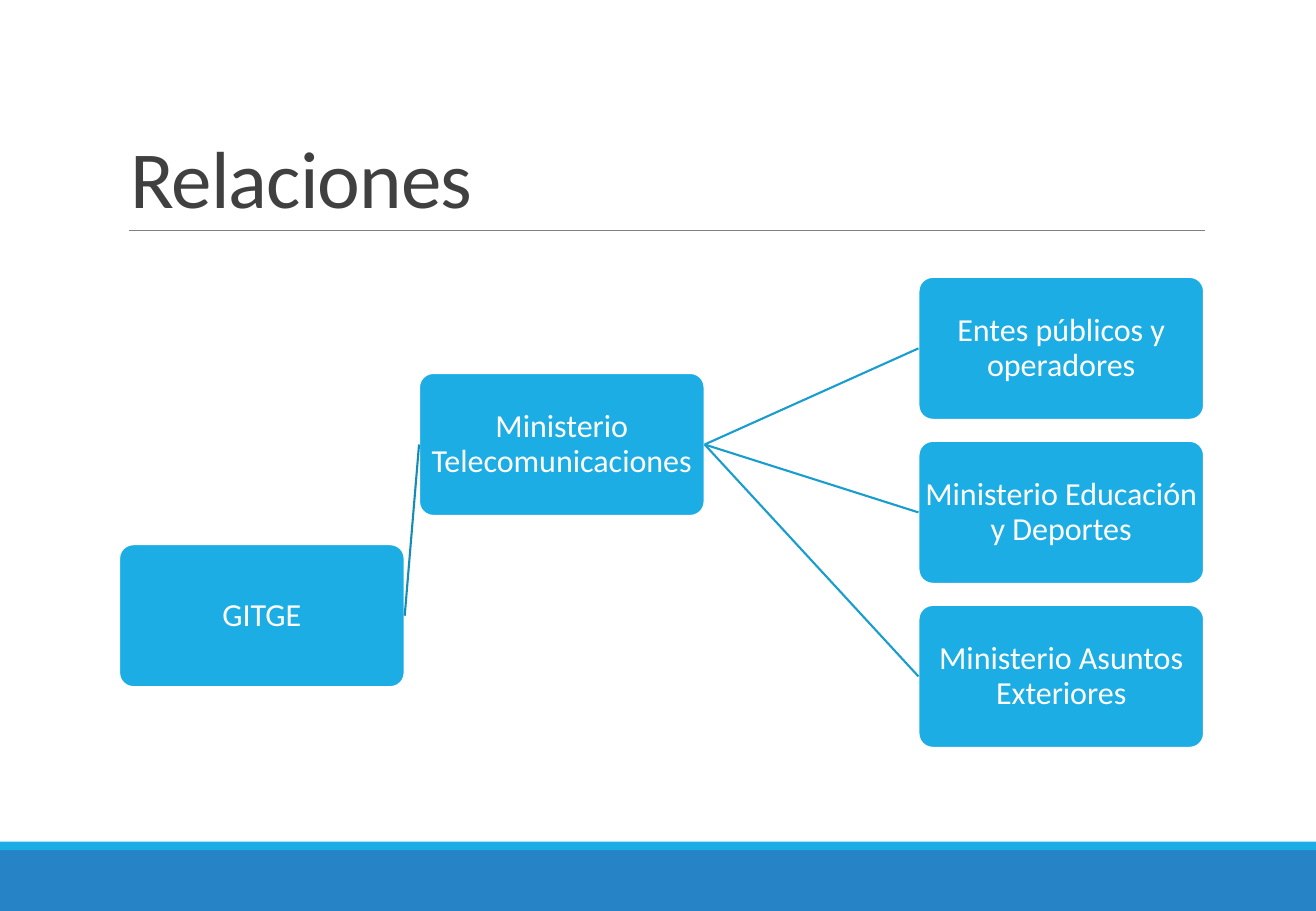
from dataclasses import dataclass
from typing import Any

from lxml import etree
from pptx import Presentation
from pptx import util as u
from pptx.dml.color import RGBColor
from pptx.enum import shapes, text
from pptx.oxml import ns

SKY, BLUE, WHITE = "1CADE4", "2683C6", "FFFFFF"
SLIDE_W, SLIDE_H = 27.51, 19.05
BOX_W, BOX_H = 5.97, 2.99
RIGHT_X, RIGHT_Y, RIGHT_STEP = 19.2, 5.79, 3.43


@dataclass(frozen=True)
class Box:
    label: str
    x: float
    y: float


@dataclass(frozen=True)
class Link:
    start: str
    end: str
    color: str


@dataclass(frozen=True)
class Band:
    y: float
    h: float
    color: str


GITGE = "GITGE"
TELECOM = "Ministerio Telecomunicaciones"
PARTNERS = [
    "Entes públicos y operadores",
    "Ministerio Educación y Deportes",
    "Ministerio Asuntos Exteriores",
]
BOXES = [Box(GITGE, 2.49, 11.38), Box(TELECOM, 8.76, 7.8)] + [
    Box(name, RIGHT_X, RIGHT_Y + i * RIGHT_STEP) for i, name in enumerate(PARTNERS)
]
LINKS = [Link(GITGE, TELECOM, "168BB7")] + [
    Link(TELECOM, name, "199DCF") for name in PARTNERS
]
BANDS = [Band(17.78, 1.27, BLUE), Band(17.6, 0.18, SKY)]


def rgb(value: str) -> RGBColor:
    return RGBColor.from_string(value)


def set_attrs(target: Any, values: dict[str, Any]) -> None:
    for name, value in values.items():
        setattr(target, name, value)


def write(s: Any, content: str, size: float, color: str,
          frame: dict[str, Any], paragraph: dict[str, Any]) -> Any:
    tf = s.text_frame
    set_attrs(tf, {"word_wrap": True, **frame})
    p = tf.paragraphs[0]
    set_attrs(p, paragraph)
    r = p.add_run()
    r.text = content
    set_attrs(r.font, {"name": "Calibri", "size": u.Pt(size)})
    r.font.color.rgb = rgb(color)
    return r


def add_filled(slide: Any, kind: Any, x: float, y: float, w: float, h: float,
               color: str) -> Any:
    s = slide.shapes.add_shape(kind, u.Cm(x), u.Cm(y), u.Cm(w), u.Cm(h))
    s.shadow.inherit = False
    s.fill.solid()
    s.fill.fore_color.rgb = rgb(color)
    return s


def add_band(slide: Any, band: Band) -> None:
    s = add_filled(slide, shapes.MSO_SHAPE.RECTANGLE, 0, band.y, SLIDE_W, band.h,
                   band.color)
    s.line.fill.background()


def add_line(slide: Any, x1: float, y1: float, x2: float, y2: float,
             color: str, width: float) -> Any:
    s = slide.shapes.add_connector(
        shapes.MSO_CONNECTOR.STRAIGHT, u.Cm(x1), u.Cm(y1), u.Cm(x2), u.Cm(y2))
    s.line.color.rgb = rgb(color)
    s.line.width = u.Pt(width)
    etree.SubElement(s._element.spPr, ns.qn("a:effectLst"))
    return s


def add_title(slide: Any) -> None:
    s = slide.shapes.add_textbox(u.Cm(2.47), u.Cm(0.79), u.Cm(22.7), u.Cm(4.04))
    r = write(s, "Relaciones", 48, "404040",
              {"vertical_anchor": text.MSO_ANCHOR.BOTTOM}, {"line_spacing": 0.85})
    r.font._element.set("spc", "-50")


def add_box(slide: Any, box: Box) -> Any:
    s = add_filled(slide, shapes.MSO_SHAPE.ROUNDED_RECTANGLE, box.x, box.y,
                   BOX_W, BOX_H, SKY)
    s.adjustments[0] = 0.1
    s.line.color.rgb = rgb(WHITE)
    s.line.width = u.Pt(1.25)
    margins = {f"margin_{side}": u.Cm(0.03)
               for side in ("left", "top", "right", "bottom")}
    write(s, box.label, 19, WHITE,
          {"vertical_anchor": text.MSO_ANCHOR.MIDDLE, **margins},
          {"alignment": text.PP_ALIGN.CENTER, "line_spacing": 0.9})
    return s


def add_link(slide: Any, link: Link, drawn: dict[str, Any]) -> None:
    s = add_line(slide, 0, 0, 1, 1, link.color, 1.25)
    s.begin_connect(drawn[link.start], 3)
    s.end_connect(drawn[link.end], 1)


def main() -> None:
    prs = Presentation()
    set_attrs(prs, {"slide_width": u.Cm(SLIDE_W), "slide_height": u.Cm(SLIDE_H)})
    slide = prs.slides.add_slide(prs.slide_layouts[6])
    for band in BANDS:
        add_band(slide, band)
    add_line(slide, 2.7, 4.82, 25.19, 4.82, "808080", 0.5)
    add_title(slide)
    drawn = {box.label: add_box(slide, box) for box in BOXES}
    for link in LINKS:
        add_link(slide, link, drawn)
    prs.save("out.pptx")


if __name__ == "__main__":
    main()
